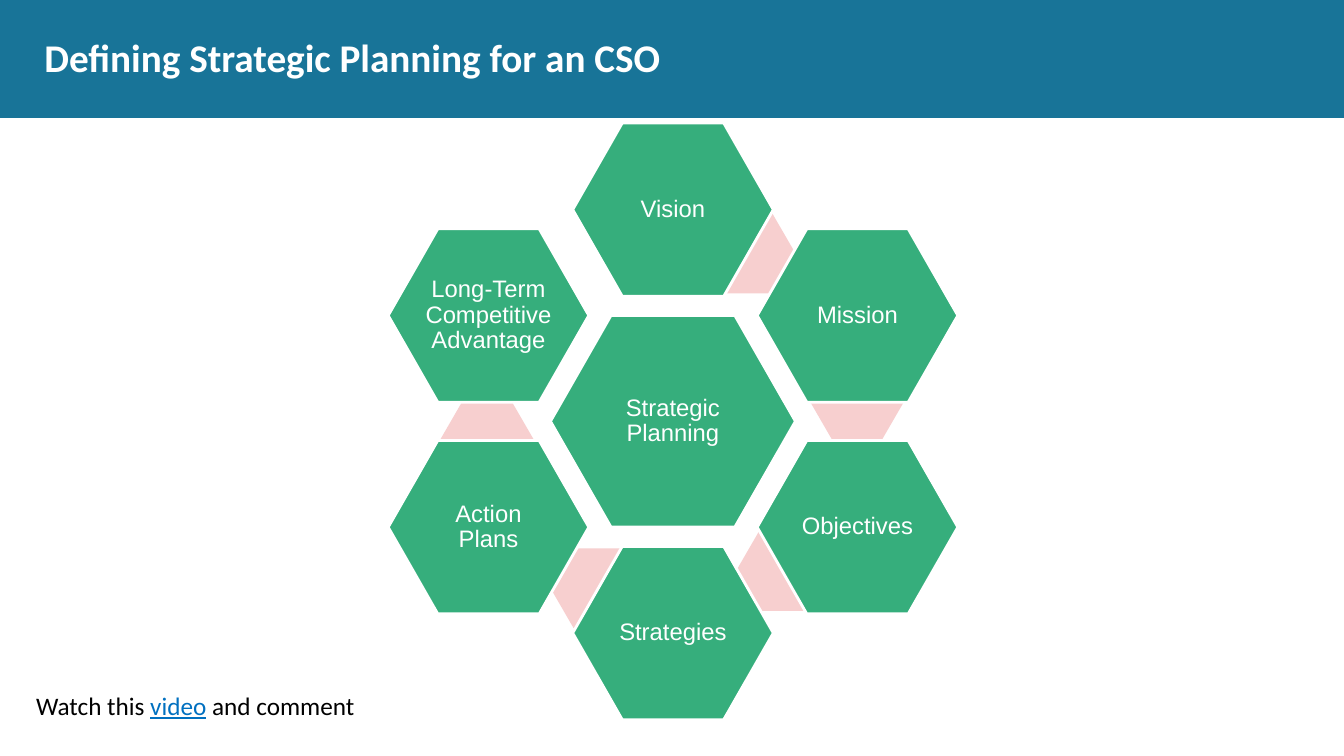
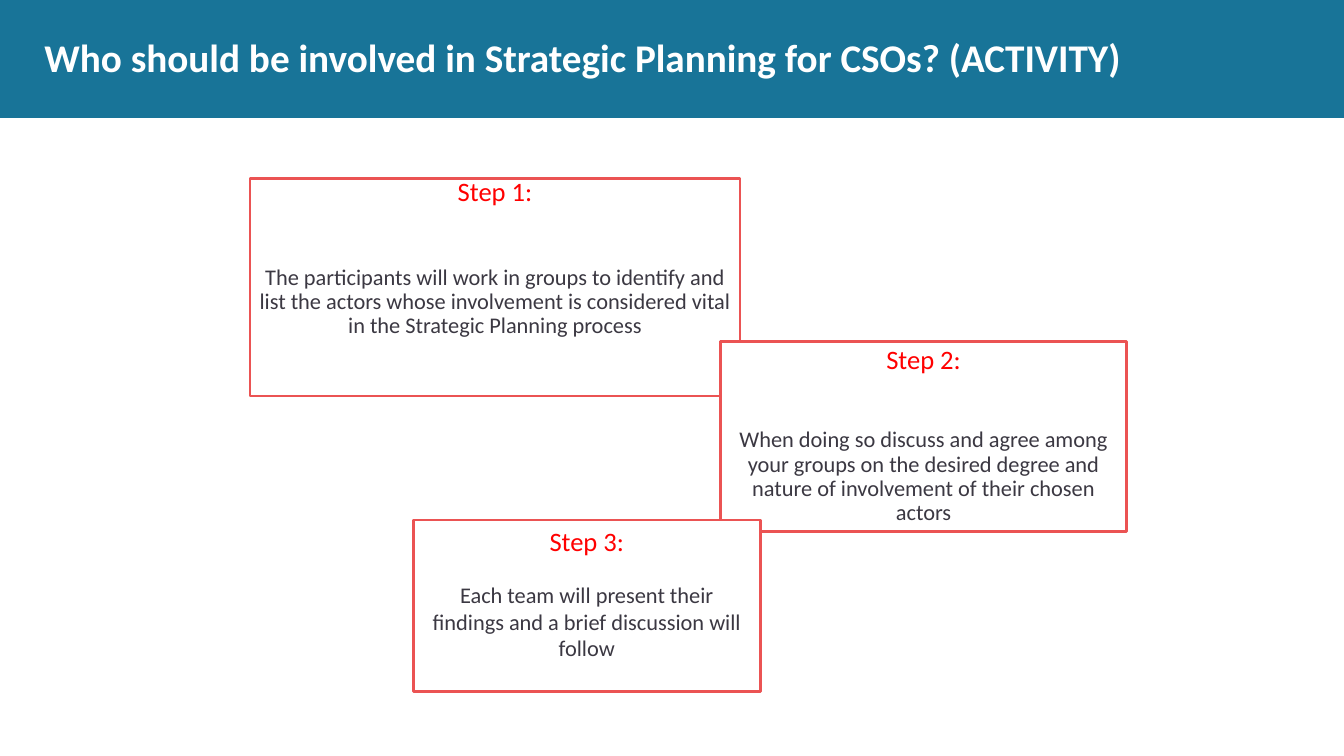
"""Build two strategic planning slides: a hexagon cycle and an activity."""

from dataclasses import dataclass
from typing import Optional

import pptx
import pptx.dml.color
import pptx.enum.shapes
import pptx.enum.text
import pptx.util

PX = 9144
WIDTH, HEIGHT = 1333, 750
BAND_HEIGHT = 117

WHITE, BLACK = "FFFFFF", "000000"
BLUE, GREEN, PINK = "187498", "36AE7C", "F7CFCF"
CORAL, RED, DARK, LINK = "EB5353", "FF0000", "3B3842", "0070C0"

SHAPE = pptx.enum.shapes.MSO_SHAPE
ALIGN = pptx.enum.text.PP_ALIGN
ANCHOR = pptx.enum.text.MSO_ANCHOR

CENTER_X, CENTER_Y = 667, 418
STEP_X, STEP_Y = 183, 105
CORE_SIZE = (243, 210)
HEX_SIZE = (199, 172)
LINK_SIZE = (92, 79)


@dataclass(frozen=True)
class Box:
    left: int
    top: int
    width: int
    height: int


@dataclass(frozen=True)
class Stage:
    label: str
    column: int
    row: int
    link: Optional[tuple[int, int]] = None


@dataclass(frozen=True)
class Card:
    heading: str
    body: str
    box: Box
    gap: int
    spacing: float = 0.9
    inset: tuple[int, int] = (10, 5)


STAGES = [
    Stage("Vision", 0, -2, (697, 212)),
    Stage("Mission", 1, -1, (804, 360)),
    Stage("Objectives", 1, 1, (730, 527)),
    Stage("Strategies", 0, 2, (546, 544)),
    Stage("Action Plans", -1, 1, (437, 396)),
    Stage("Long-Term Competitive Advantage", -1, -1),
]

CARDS = [
    Card(
        "Step 1:",
        "The participants will work in groups to identify and list the actors "
        "whose involvement is considered vital in the Strategic Planning process",
        Box(248, 177, 486, 216), gap=42, inset=(0, 0),
    ),
    Card(
        "Step 2:",
        "When doing so discuss and agree among your groups on the desired "
        "degree and nature of involvement of their chosen actors",
        Box(715, 339, 402, 188), gap=38,
    ),
    Card(
        "Step 3:",
        "Each team will present their findings and a brief discussion will follow",
        Box(410, 516, 344, 170), gap=17, spacing=1.0,
    ),
]


def px(length: int) -> pptx.util.Emu:
    """Turn px into EMU."""
    return pptx.util.Emu(length * PX)


def rgb(color: str) -> pptx.dml.color.RGBColor:
    """Turn a hex string into a colour."""
    return pptx.dml.color.RGBColor.from_string(color)


def place(box: Box) -> tuple:
    """Give the position and size of a box in EMU."""
    return px(box.left), px(box.top), px(box.width), px(box.height)


def add_run(p, text: str, *, size: int, color: str, font: str = "Calibri",
            bold: bool = False, underline: bool = False) -> None:
    """Add a formatted run to a paragraph."""
    r = p.add_run()
    r.text = text
    r.font.name = font
    r.font.size = pptx.util.Pt(size)
    r.font.bold = bold
    r.font.underline = underline
    r.font.color.rgb = rgb(color)


def set_frame(tf, inset: tuple[int, int], anchor=ANCHOR.TOP) -> None:
    """Set the wrapping, margins and anchor of a text frame."""
    tf.word_wrap = True
    tf.auto_size = pptx.enum.text.MSO_AUTO_SIZE.NONE
    tf.margin_left = tf.margin_right = px(inset[0])
    tf.margin_top = tf.margin_bottom = px(inset[1])
    tf.vertical_anchor = anchor


def add_shape(slide, kind, box: Box, fill: str, line: Optional[str] = None):
    """Add a flat preset shape with an optional 2 pt outline."""
    sp = slide.shapes.add_shape(kind, *place(box))
    sp.shadow.inherit = False
    sp.fill.solid()
    sp.fill.fore_color.rgb = rgb(fill)
    if line:
        sp.line.color.rgb = rgb(line)
        sp.line.width = pptx.util.Pt(2)
    else:
        sp.line.fill.background()
    return sp


def add_hexagon(slide, label: str, x: int, y: int, size: tuple[int, int]) -> None:
    """Add a labelled hexagon centred on a point."""
    width, height = size
    box = Box(x - width // 2, y - height // 2, width, height)
    sp = add_shape(slide, SHAPE.HEXAGON, box, GREEN, WHITE)
    sp.adjustments[0] = 0.286
    set_frame(sp.text_frame, (2, 2), ANCHOR.MIDDLE)
    p = sp.text_frame.paragraphs[0]
    p.alignment = ALIGN.CENTER
    p.line_spacing = 0.9
    add_run(p, label, size=17, color=WHITE, font="Arial")


def add_card(slide, card: Card) -> None:
    """Add an outlined card with a heading and a body."""
    sp = add_shape(slide, SHAPE.RECTANGLE, card.box, WHITE, CORAL)
    tf = sp.text_frame
    set_frame(tf, card.inset)
    heading, body = tf.paragraphs[0], tf.add_paragraph()
    for p in (heading, body):
        p.alignment = ALIGN.CENTER
        p.line_spacing = card.spacing
    body.space_before = pptx.util.Pt(card.gap)
    add_run(heading, card.heading, size=19, color=RED)
    add_run(body, card.body, size=16, color=DARK)


def add_slide(prs, title: str):
    """Add a title-only slide with its title formatted."""
    slide = prs.slides.add_slide(prs.slide_layouts[5])
    sp = slide.shapes.title
    sp.left, sp.top, sp.width, sp.height = place(Box(44, 19, 1246, 74))
    set_frame(sp.text_frame, (0, 0), ANCHOR.MIDDLE)
    p = sp.text_frame.paragraphs[0]
    p.alignment = ALIGN.LEFT
    add_run(p, title, size=28, color=WHITE, bold=True)
    return slide


def add_band(slide) -> None:
    """Put the title band on the layout that the slides share."""
    band = add_shape(slide, SHAPE.RECTANGLE, Box(0, 0, WIDTH, BAND_HEIGHT), BLUE)
    slide.slide_layout.shapes.element.insert(2, band.element)


def build_cycle(prs) -> None:
    """Build the slide with the planning cycle."""
    slide = add_slide(prs, "Defining Strategic Planning for an CSO")
    add_band(slide)
    add_hexagon(slide, "Strategic Planning", CENTER_X, CENTER_Y, CORE_SIZE)
    for stage in STAGES:
        if stage.link:
            sp = add_shape(slide, SHAPE.HEXAGON, Box(*stage.link, *LINK_SIZE), PINK)
            sp.adjustments[0] = 0.289
        x = CENTER_X + stage.column * STEP_X
        y = CENTER_Y + stage.row * STEP_Y
        add_hexagon(slide, stage.label, x, y, HEX_SIZE)
    tf = slide.shapes.add_textbox(*place(Box(26, 680, 383, 40))).text_frame
    set_frame(tf, (10, 5))
    p = tf.paragraphs[0]
    add_run(p, "Watch this ", size=18, color=BLACK)
    add_run(p, "video", size=18, color=LINK, underline=True)
    add_run(p, " and comment", size=18, color=BLACK)


def build_activity(prs) -> None:
    """Build the slide with the activity steps."""
    title = "Who should be involved in Strategic Planning for CSOs? (ACTIVITY)"
    slide = add_slide(prs, title)
    for card in CARDS:
        add_card(slide, card)


def main() -> None:
    """Build and save the presentation."""
    prs = pptx.Presentation()
    prs.slide_width, prs.slide_height = px(WIDTH), px(HEIGHT)
    build_cycle(prs)
    build_activity(prs)
    prs.save("out.pptx")


if __name__ == "__main__":
    main()
